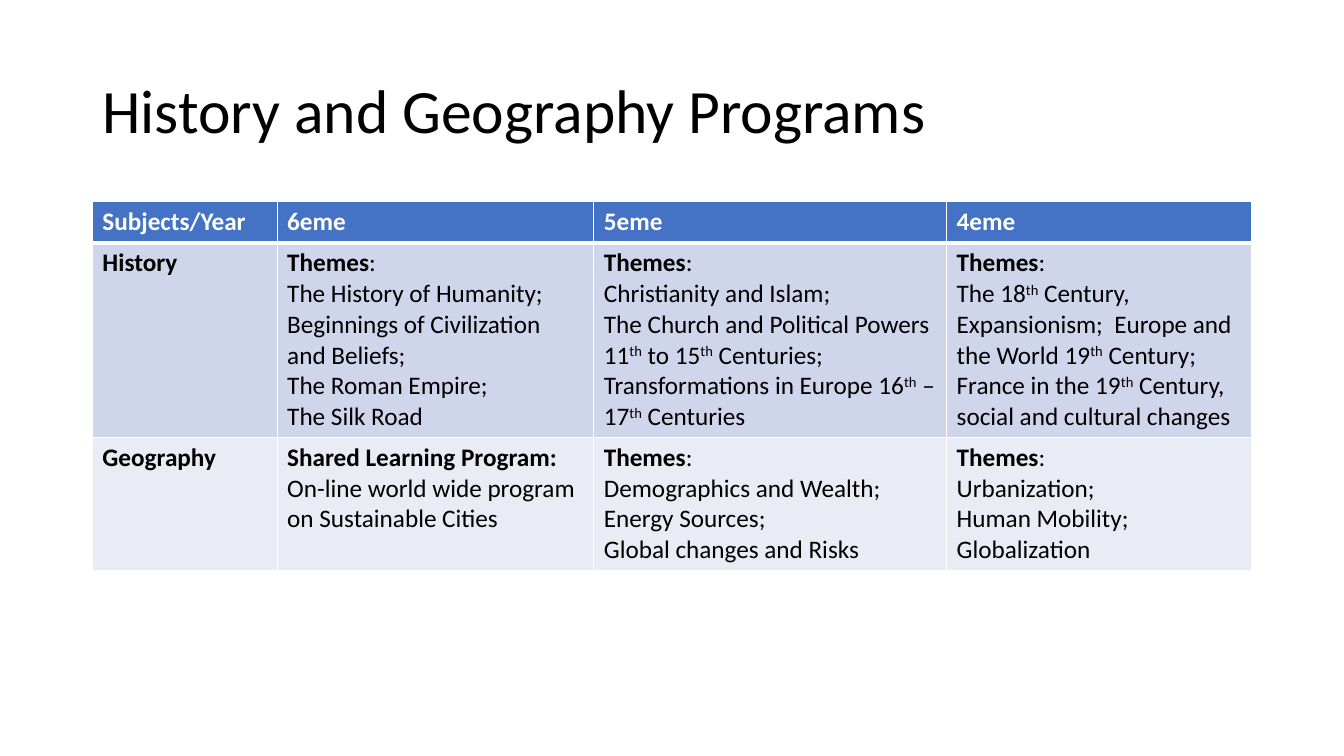
import dataclasses

import lxml.etree
import pptx
import pptx.dml.color
import pptx.enum.text
import pptx.oxml.ns
import pptx.util

COLORS = {
    "text": "000000",
    "white": "FFFFFF",
    "header": "4472C4",
    "history": "CFD5EA",
    "geography": "E9EBF5",
}
FONT = "Calibri"
UNIT = pptx.util.Inches(1) / 12
GRID_COLS, GRID_ROWS = 160, 90
TABLE_LEFT, TABLE_TOP = 11, 24
COL_SPANS = (22, 37.7, 42, 36.3)
SUPERSCRIPT = "^"


@dataclasses.dataclass
class Cell:
    heading: str
    lines: tuple[str, ...] = ()
    tail: str = ""


@dataclasses.dataclass
class Row:
    fill: str
    color: str
    span: float
    cells: tuple[Cell, ...]


def themes(*lines: str) -> Cell:
    return Cell("Themes", lines, ":")


ROWS = (
    Row("header", "white", 4.9, tuple(Cell(t) for t in ("Subjects/Year", "6eme", "5eme", "4eme"))),
    Row("history", "text", 23.1, (
        Cell("History"),
        themes(
            "The History of Humanity;",
            "Beginnings of Civilization and Beliefs;",
            "The Roman Empire;",
            "The Silk Road",
        ),
        themes(
            "Christianity and Islam;",
            "The Church and Political Powers 11^th^ to 15^th^ Centuries;",
            "Transformations in Europe 16^th^ – 17^th^ Centuries",
        ),
        themes(
            "The 18^th^ Century, Expansionism;  Europe and the World 19^th^ Century; "
            "France in the 19^th^ Century, social and cultural changes",
        ),
    )),
    Row("geography", "text", 15.9, (
        Cell("Geography"),
        Cell("Shared Learning Program:", ("On-line world wide program on Sustainable Cities",)),
        themes("Demographics and Wealth;", "Energy Sources;", "Global changes and Risks"),
        themes("Urbanization;", "Human Mobility; Globalization"),
    )),
)


def grid(span: float) -> pptx.util.Emu:
    return pptx.util.Emu(round(span * UNIT))


def rgb(name: str) -> pptx.dml.color.RGBColor:
    return pptx.dml.color.RGBColor.from_string(COLORS[name])


def add_text(p, text: str, *, size: float = 18, color: str = "text", bold: bool = False) -> None:
    for i, part in enumerate(text.split(SUPERSCRIPT)):
        if not part:
            continue
        r = p.add_run()
        r.text = part
        r.font.name = FONT
        r.font.size = pptx.util.Pt(size)
        r.font.bold = bold
        r.font.color.rgb = rgb(color)
        if i % 2:
            r._r.get_or_add_rPr().set("baseline", "30000")


def add_border(cell, side: str, width: float) -> None:
    qn = pptx.oxml.ns.qn
    tc_pr = cell._tc.get_or_add_tcPr()
    ln = lxml.etree.SubElement(tc_pr, qn(f"a:ln{side}"), w=str(pptx.util.Pt(width)))
    fill = lxml.etree.SubElement(ln, qn("a:solidFill"))
    lxml.etree.SubElement(fill, qn("a:srgbClr"), val=COLORS["white"])


def fill_cell(cell, content: Cell, row: Row, index: int) -> None:
    widths = {"L": 1, "R": 1, "T": 3 if index == 1 else 1, "B": 3 if index == 0 else 1}
    for side, width in widths.items():
        add_border(cell, side, width)
    cell.fill.solid()
    cell.fill.fore_color.rgb = rgb(row.fill)
    tf = cell.text_frame
    p = tf.paragraphs[0]
    add_text(p, content.heading, color=row.color, bold=True)
    add_text(p, content.tail, color=row.color)
    for line in content.lines:
        add_text(tf.add_paragraph(), line, color=row.color)


def add_title(s, text: str) -> None:
    sp = s.shapes.title
    sp.left, sp.top, sp.width, sp.height = map(grid, (TABLE_LEFT, 4.8, sum(COL_SPANS), 17.4))
    tf = sp.text_frame
    tf.word_wrap = True
    tf.auto_size = pptx.enum.text.MSO_AUTO_SIZE.NONE
    tf.vertical_anchor = pptx.enum.text.MSO_ANCHOR.MIDDLE
    p = tf.paragraphs[0]
    p.alignment = pptx.enum.text.PP_ALIGN.LEFT
    p.line_spacing = 0.9
    add_text(p, text, size=44)


def add_programs(s) -> None:
    box = map(grid, (TABLE_LEFT, TABLE_TOP, sum(COL_SPANS), sum(row.span for row in ROWS)))
    table = s.shapes.add_table(len(ROWS), len(COL_SPANS), *box).table
    for column, span in zip(table.columns, COL_SPANS):
        column.width = grid(span)
    for i, row in enumerate(ROWS):
        table.rows[i].height = grid(row.span)
        for j, content in enumerate(row.cells):
            fill_cell(table.cell(i, j), content, row, i)


def main() -> None:
    prs = pptx.Presentation()
    prs.slide_width, prs.slide_height = grid(GRID_COLS), grid(GRID_ROWS)
    s = prs.slides.add_slide(prs.slide_layouts.get_by_name("Title Only"))
    s.background.fill.solid()
    s.background.fill.fore_color.rgb = rgb("white")
    add_title(s, "History and Geography Programs")
    add_programs(s)
    prs.save("out.pptx")


if __name__ == "__main__":
    main()
